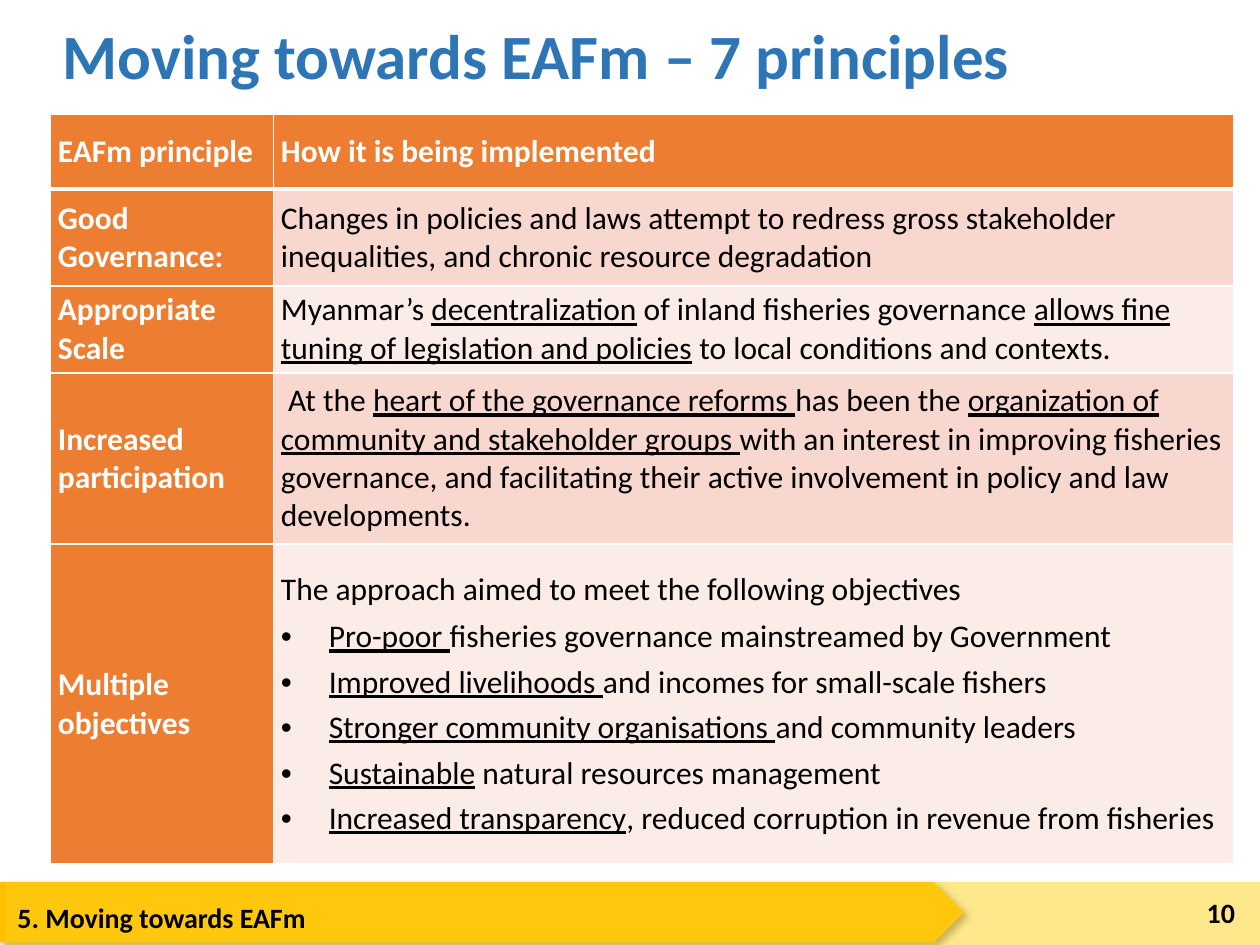
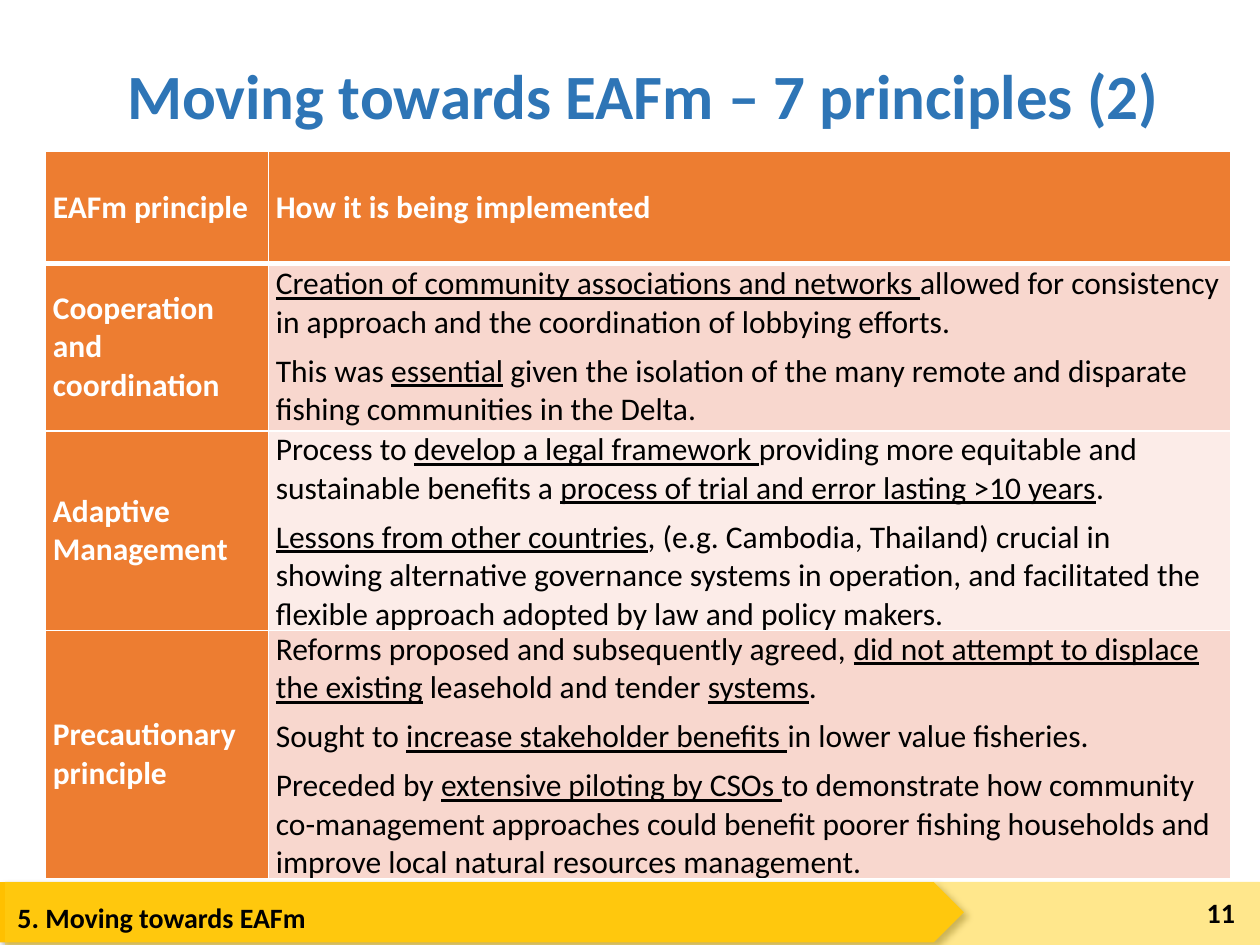
from lxml.etree import SubElement
from pptx import Presentation
from pptx.dml.color import RGBColor
from pptx.enum.shapes import MSO_SHAPE as Preset
from pptx.enum.text import MSO_ANCHOR as Anchor, PP_ALIGN as Align
from pptx.oxml import parse_xml
from pptx.oxml.ns import nsdecls, qn
from pptx.util import Inches, Pt

WHITE = RGBColor(0xFF, 0xFF, 0xFF)
BLACK = RGBColor(0x00, 0x00, 0x00)
BLUE = RGBColor(0x2E, 0x75, 0xB6)
ORANGE = RGBColor(0xED, 0x7D, 0x31)
BANDS = RGBColor(0xF8, 0xD7, 0xCE), RGBColor(0xFC, 0xEC, 0xE8)
AMBER = RGBColor(0xFF, 0xC0, 0x00)
YELLOW = RGBColor(0xFF, 0xD0, 0x1B)

FONT = "Calibri"
GRID_COLUMNS, GRID_ROWS = 100, 75
PRINCIPLE_COLUMNS = 17.7
HEADER = "EAFm principle", ["How it is being implemented"], []
FIRST_PAGE = 10

PAGES = [
    {
        "title": "Moving towards EAFm – 7 principles",
        "title_at": (4, 0.6),
        "table_at": (4, 9.1),
        "columns": 93.9,
        "rows": (5.9, 7.7, 6.9, 13.6, 25.4),
        "principles": [
            ("Good Governance:",
             ["Changes in policies and laws attempt to redress gross stakeholder "
              "inequalities, and chronic resource degradation"], []),
            ("Appropriate Scale",
             ["Myanmar’s _decentralization_ of inland fisheries governance _allows fine "
              "tuning of legislation and policies_ to local conditions and contexts."], []),
            ("Increased participation",
             [" At the _heart of the governance reforms _has been the _organization of "
              "community and stakeholder groups _with an interest in improving fisheries "
              "governance, and facilitating their active involvement in policy and law "
              "developments."], []),
            ("Multiple objectives",
             ["The approach aimed to meet the following objectives"],
             ["_Pro-poor _fisheries governance mainstreamed by Government",
              "_Improved livelihoods _and incomes for small-scale fishers",
              "_Stronger community organisations _and community leaders",
              "_Sustainable_ natural resources management",
              "_Increased transparency_, reduced corruption in revenue from fisheries"]),
        ],
    },
    {
        "title": "Moving towards EAFm – 7 principles (2)",
        "title_at": (9.1, 3.8),
        "table_at": (3.6, 12),
        "columns": 94.1,
        "rows": (8.9, 13.3, 15.5, 19.5),
        "principles": [
            ("Cooperation and coordination",
             ["_Creation of community associations and networks _allowed for consistency "
              "in approach and the coordination of lobbying efforts.",
              "This was _essential_ given the isolation of the many remote and disparate "
              "fishing communities in the Delta."], []),
            ("Adaptive Management",
             ["Process to _develop a legal framework _providing more equitable and "
              "sustainable benefits a _process of trial and error lasting >10 years_.",
              "_Lessons from other countries_, (e.g. Cambodia, Thailand) crucial in "
              "showing alternative governance systems in operation, and facilitated the "
              "flexible approach adopted by law and policy makers."], []),
            ("Precautionary principle",
             ["Reforms proposed and subsequently agreed, _did not attempt to displace "
              "the existing_ leasehold and tender _systems_.",
              "Sought to _increase stakeholder benefits _in lower value fisheries.",
              "Preceded by _extensive piloting by CSOs _to demonstrate how community "
              "co-management approaches could benefit poorer fishing households and "
              "improve local natural resources management."], []),
        ],
    },
]


class Deck:
    def __init__(self):
        self.presentation = Presentation()
        self.presentation.slide_width = Inches(10)
        self.presentation.slide_height = Inches(7.5)
        self.column = self.presentation.slide_width / GRID_COLUMNS
        self.row = self.presentation.slide_height / GRID_ROWS
        self.slide = None

    def new_slide(self):
        self.slide = self.presentation.slides.add_slide(self.presentation.slide_layouts[6])

    def place(self, left, top, columns, rows):
        return (round(left * self.column), round(top * self.row),
                round(columns * self.column), round(rows * self.row))

    def style(self, run, size, color, bold):
        run.font.name = FONT
        run.font.size = Pt(size)
        run.font.color.rgb = color
        run.font.bold = bold

    def block(self, preset, area, color):
        block = self.slide.shapes.add_shape(preset, *self.place(*area))
        block.shadow.inherit = False
        block.fill.solid()
        block.fill.fore_color.rgb = color
        block.line.fill.background()
        return block

    def label(self, text, area, size, color=BLACK, align=Align.LEFT,
              anchor=Anchor.MIDDLE, spacing=1.0):
        frame = self.slide.shapes.add_textbox(*self.place(*area)).text_frame
        frame.word_wrap = True
        frame.vertical_anchor = anchor
        frame.text = text
        paragraph = frame.paragraphs[0]
        paragraph.alignment = align
        paragraph.line_spacing = spacing
        self.style(paragraph.runs[0], size, color, True)

    def footer(self, page_number):
        arrow = self.block(Preset.PENTAGON, (0, 70, 76.5, 4.8), AMBER)
        arrow._element.spPr.find(qn("a:effectLst")).append(parse_xml(
            f'<a:outerShdw {nsdecls("a")} blurRad="{Pt(4)}" dist="{Pt(3)}" dir="2700000">'
            '<a:srgbClr val="000000"><a:alpha val="40000"/></a:srgbClr></a:outerShdw>'))
        veil = self.block(Preset.RECTANGLE, (0.4, 70, 99.6, 5), YELLOW)
        tint = veil._element.spPr.find(qn("a:solidFill"))[0]
        SubElement(tint, qn("a:alpha"), val="50000")
        self.label("5. Moving towards EAFm", (0.4, 71, 73.5, 4.1), 16, anchor=Anchor.TOP)
        self.label(str(page_number), (91.7, 70.4, 7.3, 4), 16, align=Align.RIGHT)

    def title(self, text, left, top):
        self.label(text, (left, top, 86.2, 8.2), 36, BLUE, spacing=0.9)

    def bullet(self, paragraph):
        properties = paragraph._p.get_or_add_pPr()
        indent = Inches(0.38)
        properties.set("marL", str(indent))
        properties.set("indent", str(-indent))
        SubElement(properties, qn("a:buFont"), typeface="Arial")
        SubElement(properties, qn("a:buChar"), char="•")

    def borders(self, cell, top, bottom):
        properties = cell._tc.get_or_add_tcPr()
        for side, width in (("L", 1), ("R", 1), ("T", top), ("B", bottom)):
            properties.append(parse_xml(
                f'<a:ln{side} {nsdecls("a")} w="{Pt(width)}"><a:solidFill>'
                f'<a:srgbClr val="{WHITE}"/></a:solidFill></a:ln{side}>'))

    def cell(self, cell, row_index, fill, color, bold, statements, objectives=()):
        self.borders(cell, 3 if row_index == 1 else 1, 3 if row_index == 0 else 1)
        cell.fill.solid()
        cell.fill.fore_color.rgb = fill
        cell.vertical_anchor = Anchor.MIDDLE
        cell.margin_left = cell.margin_right = Inches(0.06)
        cell.margin_top = cell.margin_bottom = 0
        frame = cell.text_frame
        for index, text in enumerate([*statements, *objectives]):
            paragraph = frame.add_paragraph() if index else frame.paragraphs[0]
            is_objective = index >= len(statements)
            if is_objective:
                self.bullet(paragraph)
            gap = Pt(2 if is_objective else 3)
            paragraph.space_before = gap if index else Pt(0)
            paragraph.space_after = gap
            for part, words in enumerate(text.split("_")):
                if words:
                    run = paragraph.add_run()
                    run.text = words
                    self.style(run, 18, color, bold)
                    run.font.underline = part % 2 == 1

    def principles_table(self, left, top, columns, rows, principles):
        table = self.slide.shapes.add_table(
            len(rows), 2, *self.place(left, top, columns, sum(rows))).table
        table.horz_banding = False
        table.columns[0].width = round(PRINCIPLE_COLUMNS * self.column)
        table.columns[1].width = round((columns - PRINCIPLE_COLUMNS) * self.column)
        for index, (principle, statements, objectives) in enumerate([HEADER, *principles]):
            table.rows[index].height = round(rows[index] * self.row)
            self.cell(table.cell(index, 0), index, ORANGE, WHITE, True, [principle])
            is_header = index == 0
            fill = ORANGE if is_header else BANDS[(index - 1) % 2]
            self.cell(table.cell(index, 1), index, fill, WHITE if is_header else BLACK,
                      is_header, statements, objectives)


def main():
    deck = Deck()
    for page_number, page in enumerate(PAGES, FIRST_PAGE):
        deck.new_slide()
        deck.footer(page_number)
        deck.title(page["title"], *page["title_at"])
        deck.principles_table(*page["table_at"], page["columns"], page["rows"],
                              page["principles"])
    deck.presentation.save("out.pptx")


if __name__ == "__main__":
    main()
